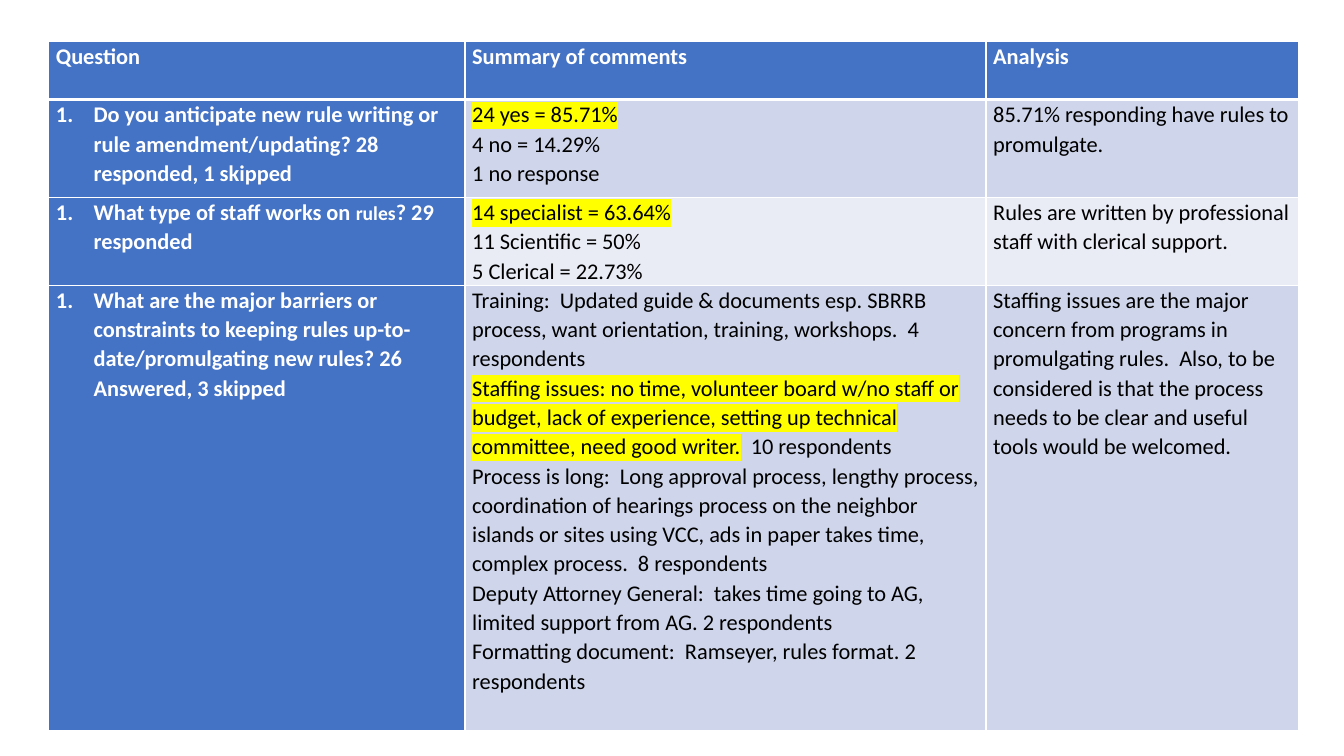
from lxml.etree import SubElement
from pptx import Presentation
from pptx.dml.color import RGBColor as RGB
from pptx.oxml.ns import qn
from pptx.util import Cm, Pt

# A cell is a list of paragraphs; a paragraph is a list of (text, style) runs.
PLAIN, MARK, SMALL = "plain", "mark", "small"
HEAD = ["Question", "Summary of comments", "Analysis"]
ROWS = [
    (
        [[("Do you anticipate new rule writing or rule amendment/updating? "
           "28 responded, 1 skipped", PLAIN)]],
        [[("24 yes = 85.71%", MARK)],
         [("4 no = 14.29%", PLAIN)],
         [("1 no response", PLAIN)]],
        [[("85.71% responding have rules to promulgate.", PLAIN)]],
    ),
    (
        [[("What type of staff works on ", PLAIN), ("rules", SMALL),
          ("? 29 responded", PLAIN)]],
        [[("14 specialist = 63.64%", MARK)],
         [("11 Scientific = 50%", PLAIN)],
         [("5 Clerical = 22.73%", PLAIN)]],
        [[("Rules are written by professional staff with clerical support.",
           PLAIN)]],
    ),
    (
        [[("What are the major barriers or constraints to keeping rules "
           "up-to-date/promulgating new rules? 26 Answered, 3 skipped",
           PLAIN)]],
        [[("Training:  Updated guide & documents esp. SBRRB process, want "
           "orientation, training, workshops.  4 respondents", PLAIN)],
         [("Staffing issues: no time, volunteer board w/no staff or budget, "
           "lack of experience, setting up technical committee, need good "
           "writer.", MARK), ("  10 respondents", PLAIN)],
         [("Process is long:  Long approval process, lengthy process, "
           "coordination of hearings process on the neighbor islands or "
           "sites using VCC, ads in paper takes time, complex process.  "
           "8 respondents", PLAIN)],
         [("Deputy Attorney General:  takes time going to AG, limited "
           "support from AG. 2 respondents", PLAIN)],
         [("Formatting document:  Ramseyer, rules format. 2 respondents",
           PLAIN)]],
        [[("Staffing issues are the major concern from programs in "
           "promulgating rules.  Also, to be considered is that the process "
           "needs to be clear and useful tools would be welcomed.", PLAIN)]],
    ),
]
BLUE, WHITE, BLACK, YELLOW = "4472C4", "FFFFFF", "000000", "FFFF00"
BANDS = ["CFD5EA", "E9EBF5"]
LEFT, TOP = 1.23, 1.04
WIDTHS = [10.49, 13.13, 7.87]
HEIGHTS = [1.47, 2.46, 1.85, 11.23]
INDENT = Cm(0.95)


def color(code):
    return RGB.from_string(code)


def paint(parent, tag, code):
    """Add a colour-holding element to parent."""
    node = SubElement(parent, qn(tag))
    SubElement(node, qn("a:srgbClr"), val=code)


def edge(cell, sides):
    """Draw white borders, given as side: points."""
    props = cell._tc.get_or_add_tcPr()
    for side, width in sides.items():
        line = SubElement(props, qn("a:ln" + side), w=str(Pt(width)))
        paint(line, "a:solidFill", WHITE)


def number(para):
    """Give a paragraph a hanging '1.'."""
    props = para._p.get_or_add_pPr()
    props.set("marL", str(INDENT))
    props.set("indent", str(-INDENT))
    SubElement(props, qn("a:buFont"), typeface="+mj-lt")
    SubElement(props, qn("a:buAutoNum"), type="arabicPeriod")


def write(cell, paras, ink, bold, listed):
    frame = cell.text_frame
    for i, runs in enumerate(paras):
        para = frame.add_paragraph() if i else frame.paragraphs[0]
        if listed:
            number(para)
        para.line_spacing = 1.07
        font = para.font
        font.name, font.size, font.bold = "Calibri", Pt(16), bold
        font.color.rgb = color(ink)
        for text, style in runs:
            run = para.add_run()
            run.text = text
            if style == SMALL:
                run.font.size = Pt(14)
            elif style == MARK:
                paint(run._r.get_or_add_rPr(), "a:highlight", YELLOW)


def main():
    deck = Presentation()
    deck.slide_width, deck.slide_height = Cm(33.87), Cm(19.05)
    slide = deck.slides.add_slide(deck.slide_layouts[6])
    rows = [[[[(name, PLAIN)]] for name in HEAD]] + ROWS
    table = slide.shapes.add_table(
        len(rows), len(HEAD), Cm(LEFT), Cm(TOP),
        Cm(sum(WIDTHS)), Cm(sum(HEIGHTS))).table
    table.first_col = True
    for col, width in zip(table.columns, WIDTHS):
        col.width = Cm(width)
    for r, (row, height) in enumerate(zip(rows, HEIGHTS)):
        table.rows[r].height = Cm(height)
        for c, paras in enumerate(row):
            cell = table.cell(r, c)
            cell.margin_left = cell.margin_right = Cm(0.18)
            cell.margin_top = cell.margin_bottom = 0
            edge(cell, {"L": 1, "R": 1, "T": 3 if r == 1 else 1,
                        "B": 1 if r else 3})
            strong = r == 0 or c == 0
            cell.fill.solid()
            cell.fill.fore_color.rgb = color(
                BLUE if strong else BANDS[(r - 1) % 2])
            write(cell, paras, WHITE if strong else BLACK, strong,
                  listed=r > 0 and c == 0)
    deck.save("out.pptx")


if __name__ == "__main__":
    main()
